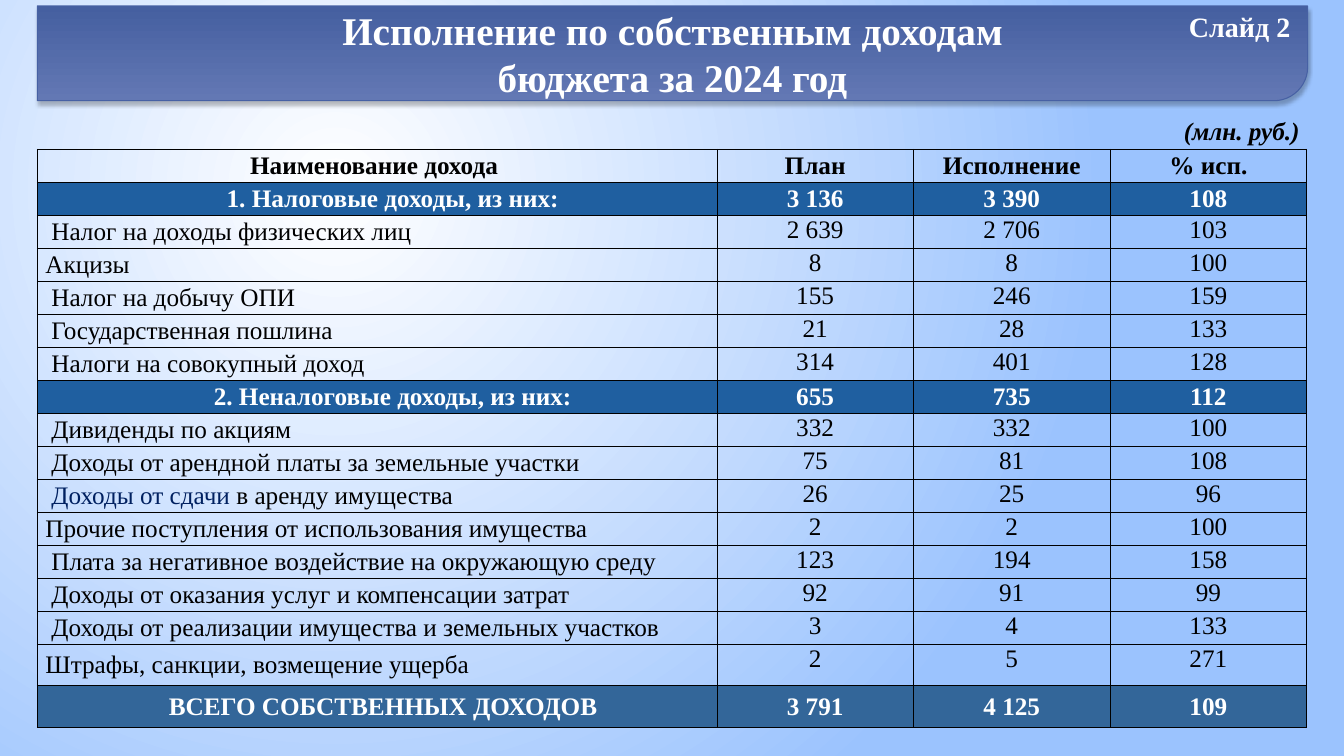
from pptx import Presentation
from pptx.dml.color import RGBColor
from pptx.enum.shapes import MSO_SHAPE as Preset
from pptx.enum.text import MSO_ANCHOR as Anchor, MSO_AUTO_SIZE as AutoSize, PP_ALIGN as Align
from pptx.oxml import parse_xml
from pptx.oxml.ns import nsdecls, qn
from pptx.util import Inches, Pt

FONT = "Times New Roman"
BLACK = RGBColor(0x00, 0x00, 0x00)
WHITE = RGBColor(0xFF, 0xFF, 0xFF)
NAVY = RGBColor(0x00, 0x20, 0x60)
SKY = RGBColor(0x9B, 0xC3, 0xFE)
SECTION_BLUE = RGBColor(0x1F, 0x5F, 0xA0)
TOTAL_BLUE = RGBColor(0x33, 0x66, 0x99)
BANNER_LIGHT = RGBColor(0x63, 0x78, 0xB4)
BANNER_DARK = RGBColor(0x45, 0x5F, 0xA0)
BANNER_LINE = RGBColor(0x47, 0x61, 0xA4)

TITLE = "Исполнение по собственным доходам бюджета за 2024 год"
# text, box, size, colour, italic, wrap
LABELS = [
    ("(млн. руб.)", (11.62, 1.08, 1.39, 0.42), 18, BLACK, True, False),
    ("Слайд 2", (11.62, 0.03, 1.35, 0.45), 20, WHITE, False, True),
]
# row kind, name, plan, actual, percent
INCOME = [
    ("header", "Наименование дохода", "План", "Исполнение", "% исп."),
    ("section", "1. Налоговые доходы, из них:", "3 136", "3 390", "108"),
    ("item", "Налог на доходы физических лиц", "2 639", "2 706", "103"),
    ("outdent", "Акцизы", "8", "8", "100"),
    ("item", "Налог на добычу ОПИ", "155", "246", "159"),
    ("item", "Государственная пошлина", "21", "28", "133"),
    ("item", "Налоги на совокупный доход", "314", "401", "128"),
    ("section", "2. Неналоговые доходы, из них:", "655", "735", "112"),
    ("item", "Дивиденды по акциям", "332", "332", "100"),
    ("item", "Доходы от арендной платы за земельные участки", "75", "81", "108"),
    ("item", "Доходы от сдачи в аренду имущества", "26", "25", "96"),
    ("outdent", "Прочие поступления от использования имущества", "2", "2", "100"),
    ("item", "Плата за негативное воздействие на окружающую среду", "123", "194", "158"),
    ("item", "Доходы от оказания услуг и компенсации затрат", "92", "91", "99"),
    ("item", "Доходы от реализации имущества и земельных участков", "3", "4", "133"),
    ("outdent", "Штрафы, санкции, возмещение ущерба", "2", "5", "271"),
    ("total", "ВСЕГО СОБСТВЕННЫХ ДОХОДОВ", "3 791", "4 125", "109"),
]
NAVY_START = "Доходы от сдачи "
# row kind: fill, text colour, bold, left and right inset of the name
ROW_STYLES = {
    "header": (None, BLACK, True, 0.01, 0.07),
    "section": (SECTION_BLUE, WHITE, True, 0.32, 0.01),
    "item": (None, BLACK, False, 0.14, 0.01),
    "outdent": (None, BLACK, False, 0.08, 0.01),
    "total": (TOTAL_BLUE, WHITE, True, 0.13, 0.01),
}
TABLE_LEFT, TABLE_TOP, TABLE_HEIGHT = 0.37, 1.48, 5.74
COLUMN_WIDTHS = [6.74, 1.95, 1.95, 1.95]
LAST_ROWS = [0.41, 0.42]


def inches(*lengths):
    return [Inches(length) for length in lengths]


def apply(target, **values):
    for name, value in values.items():
        setattr(target, name, value)


def add_run(paragraph, text, size, color, bold=True, italic=False):
    run = paragraph.add_run()
    run.text = text
    apply(run.font, name=FONT, size=Pt(size), bold=bold, italic=italic)
    run.font.color.rgb = color
    return run


def set_gradient(fill, colors):
    fill.gradient()
    for stop, color, position in zip(fill.gradient_stops, colors, (0, 1)):
        stop.color.rgb = color
        stop.position = position


def add_shadow(properties, blur, distance, angle, alpha):
    properties.append(parse_xml(
        f'<a:effectLst {nsdecls("a")}><a:outerShdw blurRad="{Pt(blur)}" dist="{Pt(distance)}" '
        f'dir="{angle * 60000}" algn="ctr" rotWithShape="0"><a:srgbClr val="000000">'
        f'<a:alpha val="{alpha * 1000}"/></a:srgbClr></a:outerShdw></a:effectLst>'))


def format_frame(frame, wrap=True):
    left, top = inches(0.11, 0.06)
    apply(frame, margin_left=left, margin_right=left, margin_top=top, margin_bottom=top,
          vertical_anchor=Anchor.TOP, word_wrap=wrap, auto_size=AutoSize.NONE)
    frame.paragraphs[0].alignment = Align.CENTER
    return frame.paragraphs[0]


def set_background(slide):
    set_gradient(slide.background.fill, (WHITE, SKY))
    linear = slide.element.find(".//" + qn("a:lin"))
    linear.getparent().replace(linear, parse_xml(
        f'<a:path {nsdecls("a")} path="circle">'
        '<a:fillToRect l="50000" t="50000" r="100000" b="100000"/></a:path>'))


def add_heading(slide):
    banner = slide.shapes.add_shape(Preset.ROUND_1_RECTANGLE, *inches(0.37, 0.06, 12.6, 0.94))
    banner.adjustments[0] = 0.356
    banner.element.spPr.find(qn("a:xfrm")).set("flipV", "1")
    set_gradient(banner.fill, (BANNER_LIGHT, BANNER_DARK))
    banner.fill.gradient_angle = 270
    banner.line.color.rgb = BANNER_LINE
    banner.line.width = Pt(0.75)
    add_shadow(banner.element.spPr, 3, 2, 90, 25)

    title = slide.shapes.title
    left, top, width, height = inches(2.88, 0, 7.58, 1.06)
    apply(title, left=left, top=top, width=width, height=height)
    run = add_run(format_frame(title.text_frame), TITLE, 28, WHITE)
    add_shadow(run.font.fill._xPr, 3, 3, 45, 50)
    # The effect list belongs between the fill and the font name.
    properties = run.font.fill._xPr
    properties.find(qn("a:solidFill")).addnext(properties.find(qn("a:effectLst")))
    banner.element.addnext(title.element)


def format_cell(cell, fill, anchor, left, right):
    apply(cell, vertical_anchor=anchor, margin_left=Inches(left), margin_right=Inches(right),
          margin_top=Inches(0.01), margin_bottom=0)
    properties = cell._tc.get_or_add_tcPr()
    for side in ("lnL", "lnR", "lnT", "lnB"):
        properties.append(parse_xml(
            f'<a:{side} {nsdecls("a")} w="{Pt(0.5)}"><a:solidFill>'
            f'<a:srgbClr val="{BLACK}"/></a:solidFill></a:{side}>'))
    if fill is None:
        cell.fill.background()
    else:
        cell.fill.solid()
        cell.fill.fore_color.rgb = fill


def add_income_table(slide):
    frame = slide.shapes.add_table(len(INCOME), len(COLUMN_WIDTHS), *inches(
        TABLE_LEFT, TABLE_TOP, sum(COLUMN_WIDTHS), TABLE_HEIGHT))
    table = frame.table
    apply(table, first_row=False, horz_banding=False)
    for column, width in zip(table.columns, COLUMN_WIDTHS):
        column.width = Inches(width)
    equal_rows = len(INCOME) - len(LAST_ROWS)
    equal_height = (TABLE_HEIGHT - sum(LAST_ROWS)) / equal_rows
    for row, height in zip(table.rows, [equal_height] * equal_rows + LAST_ROWS):
        row.height = Inches(height)

    for row, (kind, *texts) in zip(table.rows, INCOME):
        fill, color, bold, name_left, name_right = ROW_STYLES[kind]
        for index, (cell, text) in enumerate(zip(row.cells, texts)):
            is_name = index == 0
            anchor = Anchor.MIDDLE if is_name or bold else Anchor.TOP
            left, right = (name_left, name_right) if is_name else (0.01, 0.01)
            format_cell(cell, fill, anchor, left, right)
            paragraph = cell.text_frame.paragraphs[0]
            paragraph.alignment = Align.LEFT if is_name and not bold else Align.CENTER
            if text.startswith(NAVY_START):
                add_run(paragraph, NAVY_START, 18, NAVY, bold)
                text = text.removeprefix(NAVY_START)
            add_run(paragraph, text, 18, color, bold)


def main():
    presentation = Presentation()
    presentation.slide_width, presentation.slide_height = inches(13.33, 7.5)
    slide = presentation.slides.add_slide(presentation.slide_layouts[5])
    set_background(slide)
    add_heading(slide)
    for text, box, size, color, italic, wrap in LABELS:
        label = slide.shapes.add_textbox(*inches(*box))
        add_run(format_frame(label.text_frame, wrap), text, size, color, italic=italic)
    add_income_table(slide)
    presentation.save("out.pptx")


if __name__ == "__main__":
    main()
